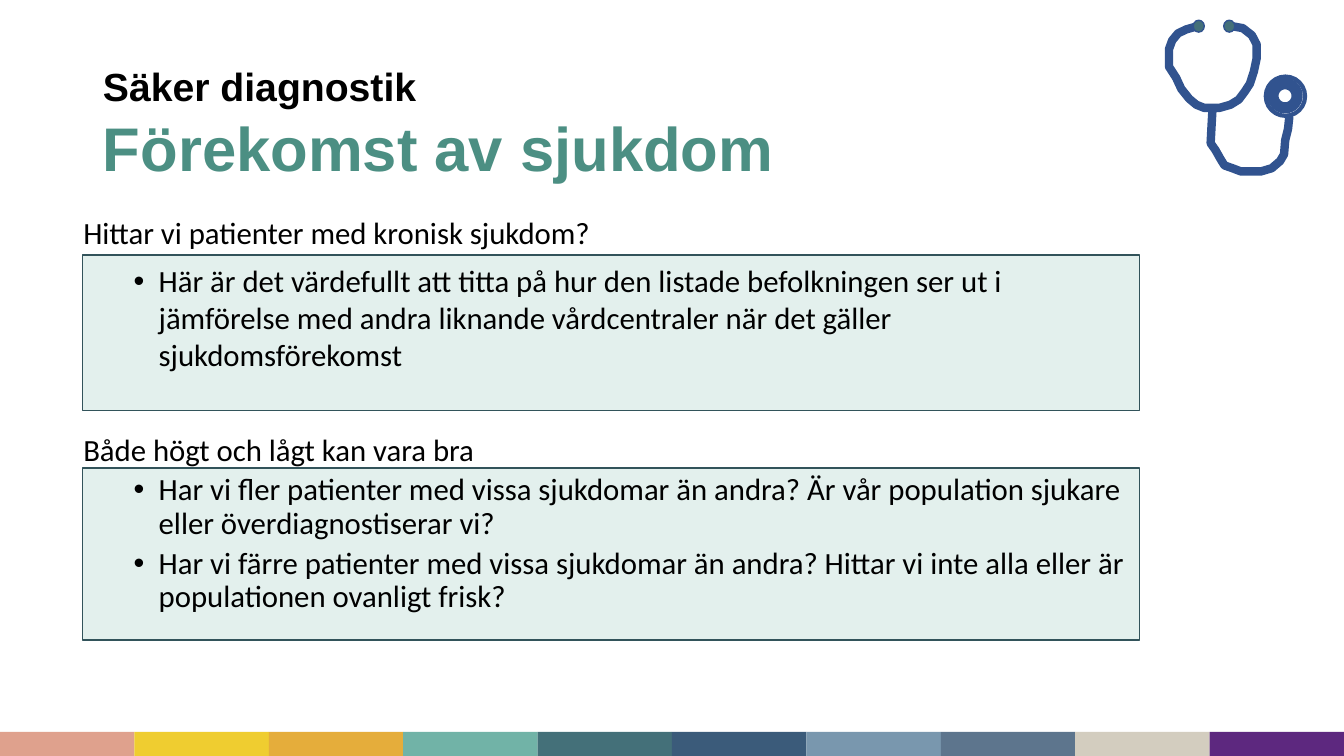
from lxml.etree import SubElement
from pptx import Presentation
from pptx.dml.color import RGBColor
from pptx.enum.shapes import MSO_SHAPE
from pptx.enum.text import MSO_ANCHOR, MSO_AUTO_SIZE, PP_ALIGN
from pptx.oxml.ns import qn
from pptx.util import Cm, Pt

COLORS = {
    "text": "000000", "heading": "4C8F83", "panel": "E3F0ED", "panel_line": "32535A",
    "tube": "31538F", "earpiece": "447079",
}
STRIPE_COLORS = ["DFA18D", "EFCD30", "E5AD3B", "71B3A7", "447079",
                 "3B5B7A", "7997AE", "5D758D", "D3CDBF", "5D287F"]


def style_shape(shape, fill=None, line=None, width=1):
    shape.shadow.inherit = False
    if fill:
        shape.fill.solid()
        shape.fill.fore_color.rgb = RGBColor.from_string(fill)
    else:
        shape.fill.background()
    if line:
        shape.line.color.rgb = RGBColor.from_string(line)
        shape.line.width = Pt(width)
    else:
        shape.line.fill.background()


def add_run(paragraph, text, color, **font_values):
    run = paragraph.add_run()
    run.text = text
    run.font.color.rgb = RGBColor.from_string(color)
    for name, value in font_values.items():
        setattr(run.font, name, value)


presentation = Presentation()
presentation.slide_width = Cm(33.87)
presentation.slide_height = Cm(19.05)
slide = presentation.slides.add_slide(presentation.slide_layouts[5])
shapes = slide.shapes

stripe_width = presentation.slide_width / len(STRIPE_COLORS)
for index, color in enumerate(STRIPE_COLORS):
    left, right = round(index * stripe_width), round((index + 1) * stripe_width)
    stripe = shapes.add_shape(MSO_SHAPE.RECTANGLE, left, Cm(18.44), right - left, Cm(0.61))
    style_shape(stripe, color)

for top, height in [(11.79, 4.34), (6.43, 3.91)]:
    panel = shapes.add_shape(MSO_SHAPE.RECTANGLE, Cm(2.08), Cm(top), Cm(26.64), Cm(height))
    style_shape(panel, COLORS["panel"], COLORS["panel_line"])

title = shapes.title
title_place = {"left": Cm(2.34), "top": Cm(1.02), "width": Cm(18.24), "height": Cm(4.17)}
for name, value in title_place.items():
    setattr(title, name, value)
title_format = {"vertical_anchor": MSO_ANCHOR.MIDDLE, "word_wrap": True,
                "auto_size": MSO_AUTO_SIZE.NONE}
for name, value in title_format.items():
    setattr(title.text_frame, name, value)
paragraph = title.text_frame.paragraphs[0]
paragraph.alignment = PP_ALIGN.LEFT
add_run(paragraph, "Säker diagnostik", COLORS["text"], name="Arial", size=Pt(28), bold=True)
paragraph.add_line_break()
add_run(paragraph, "Förekomst av sjukdom", COLORS["heading"],
        name="Arial", size=Pt(44), bold=True)

body = shapes.add_textbox(Cm(1.85), Cm(5.36), Cm(26.87), Cm(12.04))
body.text_frame.word_wrap = True
body_paragraphs = [
    ("Hittar vi patienter med kronisk sjukdom?", False, 0.9, 0),
    ("Här är det värdefullt att titta på hur den listade befolkningen ser ut i jämförelse "
     "med andra liknande vårdcentraler när det gäller sjukdomsförekomst", True, 1.0, 8),
    ("Både högt och lågt kan vara bra", False, 1.0, 41),
    ("Har vi fler patienter med vissa sjukdomar än andra? Är vår population sjukare "
     "eller överdiagnostiserar vi?", True, 0.9, 5),
    ("Har vi färre patienter med vissa sjukdomar än andra? Hittar vi inte alla eller är "
     "populationen ovanligt frisk?", True, 0.9, 5),
]
for index, (text, bulleted, line_spacing, space_before) in enumerate(body_paragraphs):
    frame = body.text_frame
    paragraph = frame.add_paragraph() if index else frame.paragraphs[0]
    paragraph_format = {"line_spacing": line_spacing, "space_before": Pt(space_before),
                        "alignment": PP_ALIGN.LEFT}
    for name, value in paragraph_format.items():
        setattr(paragraph, name, value)
    add_run(paragraph, text, COLORS["text"], name="Calibri", size=Pt(22))
    if bulleted:
        paragraph.level = 1
        properties = paragraph._p.get_or_add_pPr()
        properties.set("marL", str(Cm(1.9)))
        properties.set("indent", str(-Cm(0.63)))
        SubElement(properties, qn("a:buFont"), typeface="Arial")
        SubElement(properties, qn("a:buChar"), char="•")

headset_points = [
    (3104, 66), (3132, 71), (3155, 89), (3167, 112), (3167, 147), (3160, 180),
    (3150, 211), (3137, 231), (3122, 251), (3101, 264), (3073, 272), (3035, 272),
    (3015, 264), (2997, 249), (2977, 224), (2964, 196), (2946, 168), (2946, 124),
    (2954, 102), (2969, 84), (2990, 74), (3018, 66),
]
hose_points = [
    (3056, 269), (3053, 323), (3051, 361), (3063, 378), (3076, 401), (3086, 417),
    (3106, 424), (3127, 432), (3178, 432), (3205, 424), (3226, 406), (3236, 389),
    (3239, 353), (3246, 325), (3249, 297), (3246, 287),
]
for points in [headset_points, hose_points]:
    builder = shapes.build_freeform(*points[0], scale=Cm(0.01))
    builder.add_line_segments(points[1:], close=False)
    style_shape(builder.convert_to_shape(), None, COLORS["tube"], 6)

stethoscope_ovals = [
    (30.07, 0.51, 0.28, 0.3, COLORS["earpiece"], 1),
    (30.84, 0.51, 0.28, 0.3, COLORS["earpiece"], 1),
    (31.9, 1.93, 0.99, 0.99, None, 3),
    (32.08, 2.11, 0.61, 0.61, None, 8),
]
for left, top, width, height, fill, line_width in stethoscope_ovals:
    oval = shapes.add_shape(MSO_SHAPE.OVAL, Cm(left), Cm(top), Cm(width), Cm(height))
    style_shape(oval, fill, COLORS["tube"], line_width)

presentation.save("out.pptx")
